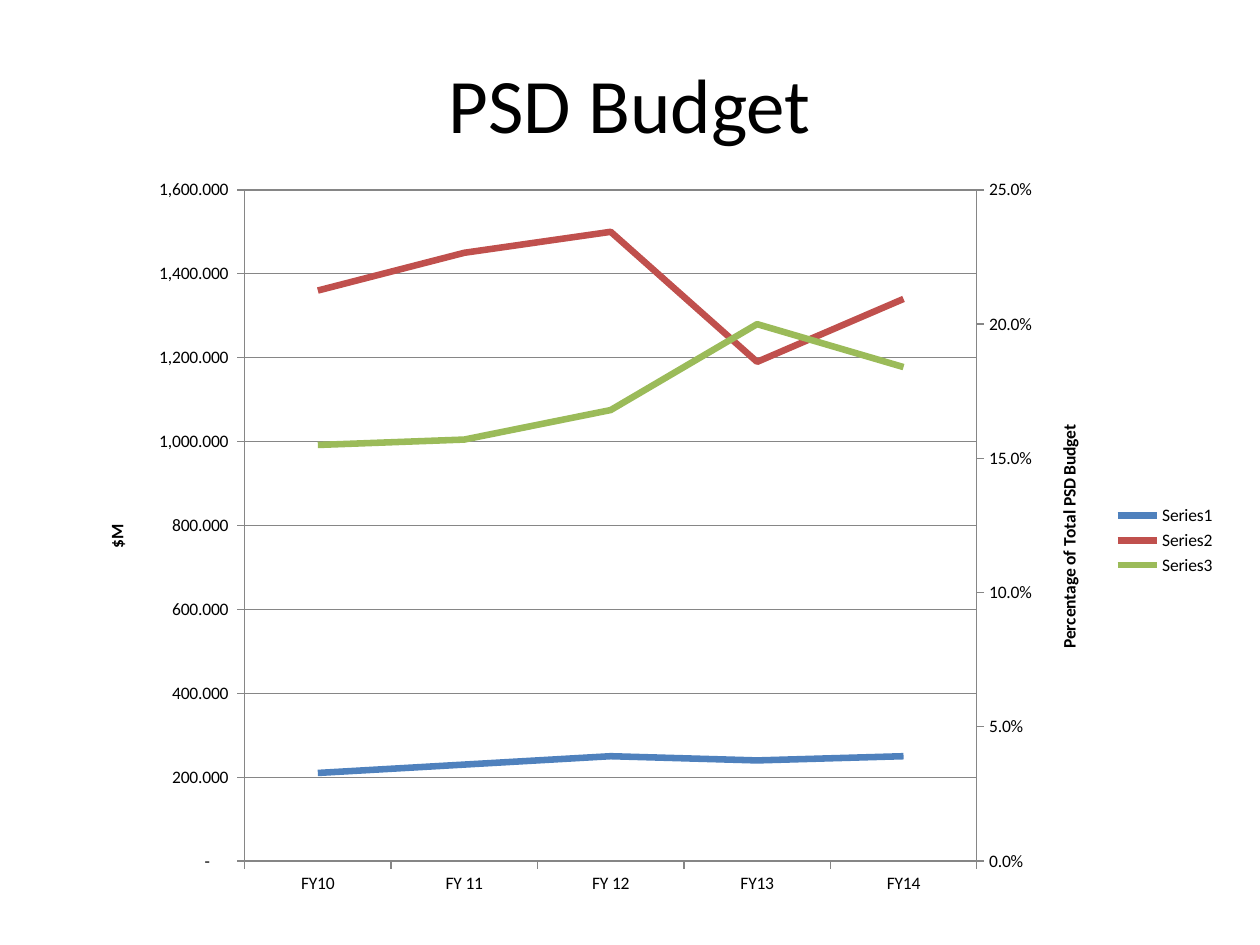
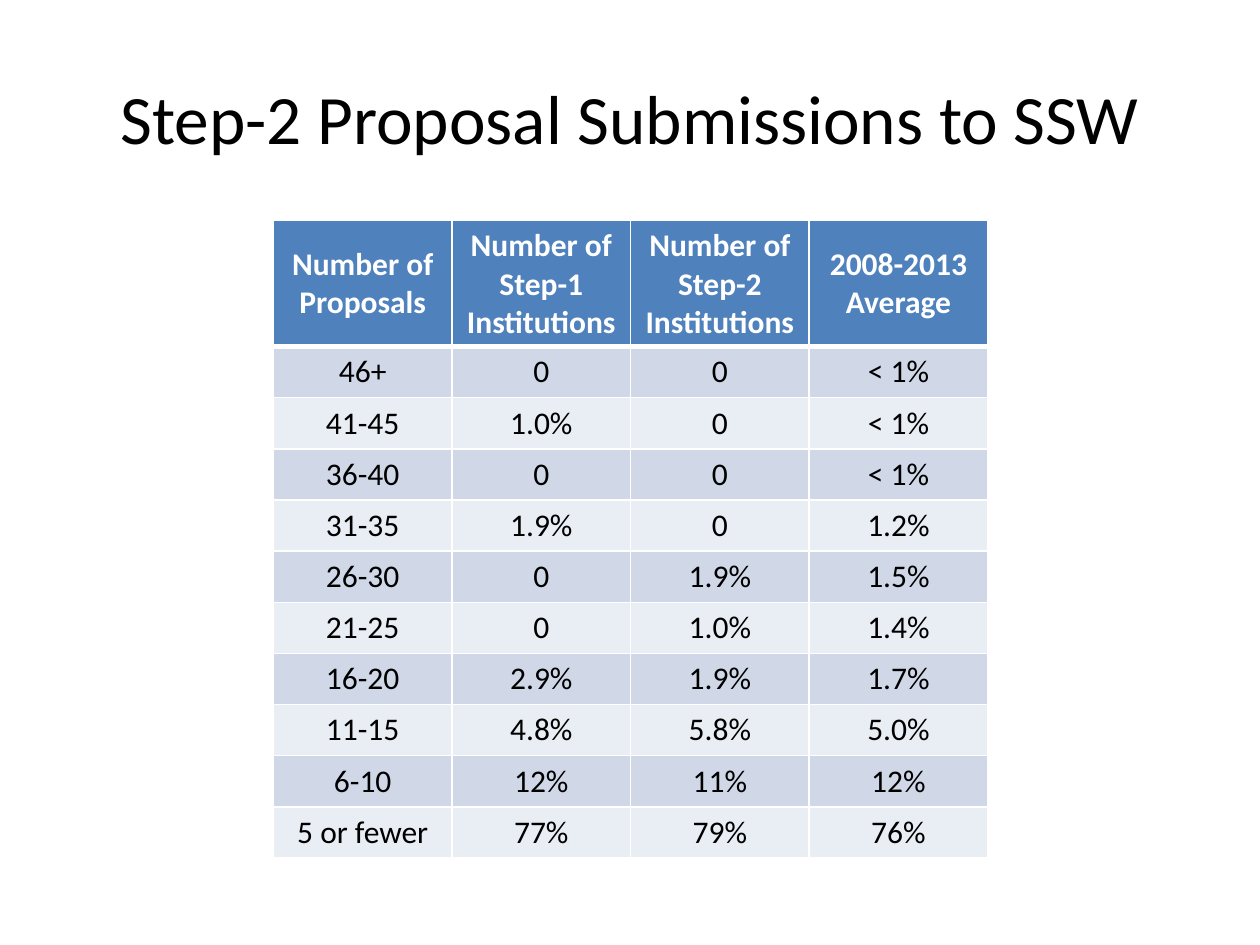
"""Build two slides on a division's budget and its proposal submissions."""
from copy import deepcopy

from lxml import etree
from pptx import Presentation
from pptx.chart.axis import CategoryAxis, ValueAxis
from pptx.chart.data import CategoryChartData
from pptx.dml.color import RGBColor
from pptx.enum.chart import XL_CHART_TYPE as ChartType, XL_LEGEND_POSITION as LegendPosition
from pptx.enum.chart import XL_TICK_MARK as TickMark
from pptx.enum.text import MSO_ANCHOR as Anchor, PP_ALIGN as Align
from pptx.oxml import parse_xml
from pptx.oxml.ns import nsdecls, qn
from pptx.util import Inches, Pt

FONT = "Calibri"
BLACK = RGBColor(0x00, 0x00, 0x00)
WHITE = RGBColor(0xFF, 0xFF, 0xFF)
BLUE = RGBColor(0x4F, 0x81, 0xBD)
RED = RGBColor(0xC0, 0x50, 0x4D)
GREEN = RGBColor(0x9B, 0xBB, 0x59)
GREY = RGBColor(0x86, 0x86, 0x86)
BANDS = (RGBColor(0xD0, 0xD8, 0xE8), RGBColor(0xE9, 0xED, 0xF4))

YEARS = ("FY10", "FY 11", "FY 12", "FY13", "FY14")
BUDGET_SERIES = (
    ("Series1", (210, 230, 250, 240, 250), BLUE),
    ("Series2", (1360, 1450, 1500, 1190, 1340), RED),
    ("Series3", (0.155, 0.157, 0.168, 0.2, 0.184), GREEN),
)
DOLLAR_FORMAT = r'_(* #,##0.000_);_(* \(#,##0.000\);_(* "-"??_);_(@_)'

HEADINGS = ("Number of Proposals", "Number of Step-1 Institutions",
            "Number of Step-2 Institutions", "2008-2013 Average")
SUBMISSIONS = (
    ("46+", "0", "0", "< 1%"),
    ("41-45", "1.0%", "0", "< 1%"),
    ("36-40", "0", "0", "< 1%"),
    ("31-35", "1.9%", "0", "1.2%"),
    ("26-30", "0", "1.9%", "1.5%"),
    ("21-25", "0", "1.0%", "1.4%"),
    ("16-20", "2.9%", "1.9%", "1.7%"),
    ("11-15", "4.8%", "5.8%", "5.0%"),
    ("6-10", "12%", "11%", "12%"),
    ("5 or fewer", "77%", "79%", "76%"),
)


def write_text(frame, text, size=18, color=BLACK, bold=False, align=Align.CENTER):
    """Put one formatted paragraph into a text frame."""
    frame.text = text
    paragraph = frame.paragraphs[0]
    paragraph.alignment = align
    font = paragraph.runs[0].font
    font.name, font.size, font.bold = FONT, Pt(size), bold
    font.color.rgb = color


def add_title_slide(presentation, title, height, size):
    """Add a blank slide with a centred title."""
    slide = presentation.slides.add_slide(presentation.slide_layouts[6])
    box = slide.shapes.add_textbox(Inches(0.5), Inches(0.3), Inches(9), Inches(height))
    box.text_frame.word_wrap = True
    box.text_frame.vertical_anchor = Anchor.MIDDLE
    write_text(box.text_frame, title, size=size)
    return slide


def style_line(line, color=GREY, width=0.75):
    """Set the colour and width of a line."""
    line.color.rgb = color
    line.width = Pt(width)


def style_value_axis(axis, title, number_format, maximum, step):
    """Set the title, scale and number format of a value axis."""
    write_text(axis.axis_title.text_frame, title, size=10, bold=True)
    axis.minimum_scale, axis.maximum_scale, axis.major_unit = 0, maximum, step
    axis.tick_labels.number_format = number_format
    axis.tick_labels.number_format_is_linked = False
    axis.major_tick_mark = TickMark.OUTSIDE
    style_line(axis.format.line)


def set_axis_ids(axis, own, crossing):
    """Give an axis element its own id and that of the axis it crosses."""
    axis.find(qn("c:axId")).set("val", own)
    axis.find(qn("c:crossAx")).set("val", crossing)


def move_last_series_right(plot_area):
    """Move the last series to a second line plot and return its value axis."""
    main_plot = plot_area.find(qn("c:lineChart"))
    category = plot_area.find(qn("c:catAx"))
    value = plot_area.find(qn("c:valAx"))
    right_plot = deepcopy(main_plot)
    right_category, right_value = deepcopy(category), deepcopy(value)
    main_plot.remove(main_plot.findall(qn("c:ser"))[-1])
    for series in right_plot.findall(qn("c:ser"))[:-1]:
        right_plot.remove(series)
    ids = ("5001", "5002")
    for reference, axis_id in zip(right_plot.findall(qn("c:axId")), ids):
        reference.set("val", axis_id)
    set_axis_ids(right_category, *ids)
    set_axis_ids(right_value, *reversed(ids))
    right_value.find(qn("c:axPos")).set("val", "r")
    right_value.find(qn("c:crosses")).set("val", "max")
    main_plot.addnext(right_plot)
    value.addnext(right_value)
    right_value.addnext(right_category)
    CategoryAxis(right_category).visible = False
    return ValueAxis(right_value)


def set_plot_layout(plot_area, **fractions):
    """Fix the inner plot area as fractions of the chart."""
    for previous in plot_area.findall(qn("c:layout")):
        plot_area.remove(previous)
    layout = parse_xml(f"<c:layout {nsdecls('c')}><c:manualLayout/></c:layout>")
    settings = {"layoutTarget": "inner", "xMode": "edge", "yMode": "edge", **fractions}
    for name, setting in settings.items():
        etree.SubElement(layout[0], qn(f"c:{name}")).set("val", str(setting))
    plot_area.insert(0, layout)


def add_budget_chart(slide):
    """Add the line chart with dollars on the left and percentages on the right."""
    data = CategoryChartData()
    data.categories = YEARS
    for name, values, _ in BUDGET_SERIES:
        data.add_series(name, values)
    chart = slide.shapes.add_chart(ChartType.LINE, Inches(0.67), Inches(1.33),
                                   Inches(9.08), Inches(5.92), data).chart
    chart.has_title = False
    chart.font.name, chart.font.size = FONT, Pt(10)
    chart.font.color.rgb = BLACK
    chart.has_legend = True
    chart.legend.position = LegendPosition.RIGHT
    chart.legend.include_in_layout = False
    chart.plots[0].vary_by_categories = False
    for series, (_, _, color) in zip(chart.plots[0].series, BUDGET_SERIES):
        series.smooth = False
        style_line(series.format.line, color, 3.75)

    chart.category_axis.major_tick_mark = TickMark.OUTSIDE
    style_line(chart.category_axis.format.line)
    dollars = chart.value_axis
    style_value_axis(dollars, "$M", DOLLAR_FORMAT, 1600, 200)
    plot_area = chart.element.find(".//" + qn("c:plotArea"))
    percentages = move_last_series_right(plot_area)
    percentages.has_major_gridlines = False
    style_value_axis(percentages, "Percentage of Total PSD Budget", "0.0%", 0.25, 0.05)
    style_line(dollars.major_gridlines.format.line)
    for body in plot_area.xpath("c:valAx/c:title//a:bodyPr"):
        body.set("rot", "-5400000")
        body.set("vert", "horz")
    set_plot_layout(plot_area, x=0.14, y=0.03, w=0.64, h=0.9)


def set_borders(cell, bottom=1, top=1):
    """Draw white borders around a cell."""
    properties = cell._tc.get_or_add_tcPr()
    for index, (side, width) in enumerate((("L", 1), ("R", 1), ("T", top), ("B", bottom))):
        properties.insert(index, parse_xml(
            f'<a:ln{side} {nsdecls("a")} w="{Pt(width)}"><a:solidFill>'
            f'<a:srgbClr val="{WHITE}"/></a:solidFill></a:ln{side}>'))


def add_submission_table(slide):
    """Add the banded table of proposals per institution."""
    rows = (HEADINGS, *SUBMISSIONS)
    height, header_height = Inches(5.06), Inches(1)
    table = slide.shapes.add_table(len(rows), len(HEADINGS), Inches(2.17), Inches(1.75),
                                   Inches(5.67), height).table
    for index, texts in enumerate(rows):
        header = index == 0
        table.rows[index].height = (header_height if header
                                    else (height - header_height) // len(SUBMISSIONS))
        for cell, text in zip(table.rows[index].cells, texts):
            cell.vertical_anchor = Anchor.MIDDLE
            cell.fill.solid()
            cell.fill.fore_color.rgb = BLUE if header else BANDS[(index - 1) % 2]
            write_text(cell.text_frame, text, color=WHITE if header else BLACK, bold=header)
            set_borders(cell, bottom=3 if header else 1, top=3 if index == 1 else 1)


def main():
    """Build and save the presentation."""
    presentation = Presentation()
    presentation.slide_width, presentation.slide_height = Inches(10), Inches(7.5)
    add_budget_chart(add_title_slide(presentation, "PSD Budget", height=1.03, size=44))
    add_submission_table(add_title_slide(
        presentation, "Step-2 Proposal Submissions to SSW", height=1.25, size=39.6))
    presentation.save("out.pptx")


if __name__ == "__main__":
    main()
